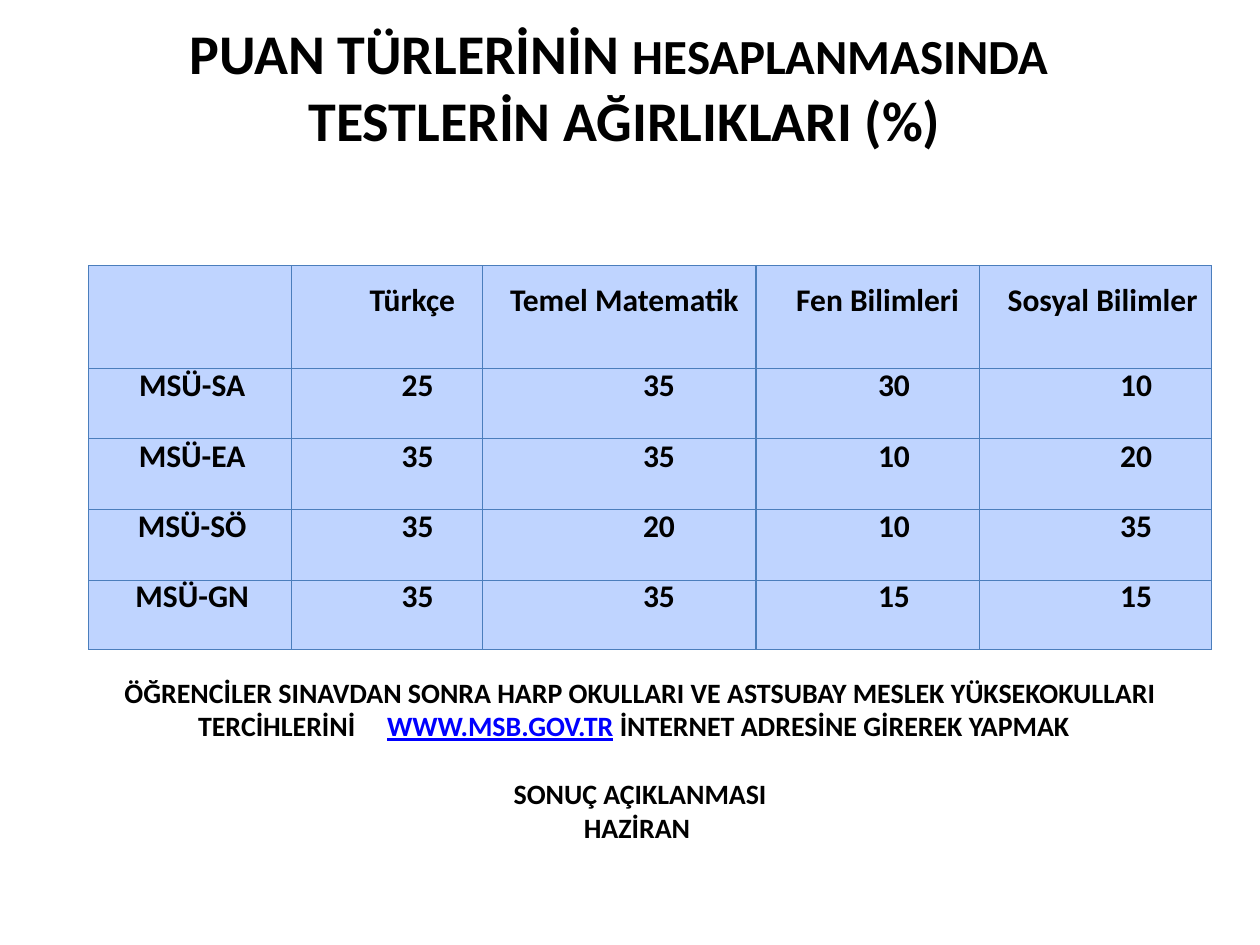
from lxml.etree import SubElement
from pptx import Presentation
from pptx.dml.color import RGBColor
from pptx.enum.text import MSO_ANCHOR, PP_ALIGN
from pptx.oxml.ns import qn
from pptx.util import Pt


def color(value):
    return RGBColor.from_string(value)


def style(span, size, ink="000000"):
    span.font.name = "Calibri"
    span.font.size = Pt(size)
    span.font.bold = True
    span.font.color.rgb = color(ink)


deck = Presentation()
deck.slide_width, deck.slide_height = Pt(720), Pt(540)
page = deck.slides.add_slide(deck.slide_layouts[6])

# Title, two centred lines
title = page.shapes.add_textbox(Pt(33.84), Pt(0), Pt(646.56), Pt(136)).text_frame
title.word_wrap = True
title.margin_top = Pt(10.4)
para = title.paragraphs[0]
para.alignment = PP_ALIGN.CENTER
for text, size in [("PUAN TÜRLERİNİN ", 32), ("HESAPLANMASINDA", 28), (" ", 32)]:
    span = para.add_run()
    span.text = text
    style(span, size)
para.add_line_break()
span = para.add_run()
span.text = "TESTLERİN AĞIRLIKLARI (%)"
style(span, 32)

# Weights table
rows = [
    ["", "Türkçe", "Temel Matematik", "Fen Bilimleri", "Sosyal Bilimler"],
    ["MSÜ-SA", "25", "35", "30", "10"],
    ["MSÜ-EA", "35", "35", "10", "20"],
    ["MSÜ-SÖ", "35", "20", "10", "35"],
    ["MSÜ-GN", "35", "35", "15", "15"],
]
widths = [116.2, 109, 156.2, 127.6, 132.5]
heights = [58.7, 40.3, 40.3, 40.5, 39.8]
header_indents = [0, 28.8, 5.8, 11.5, 8.6]
body_indents = [2.2, 34.6, 45.4, 30.2, 46.8]
line_heights = [10.3, 10.5, 10.5, 10.5, 10.3]

table = page.shapes.add_table(
    len(rows), len(widths), Pt(50.6), Pt(151.8), Pt(sum(widths)), Pt(sum(heights))
).table
table.first_row = table.horz_banding = False
for column, width in zip(table.columns, widths):
    column.width = Pt(width)
for r, values in enumerate(rows):
    table.rows[r].height = Pt(heights[r])
    indents = body_indents if r else header_indents
    for c, value in enumerate(values):
        cell = table.cell(r, c)
        cell.margin_left = cell.margin_right = cell.margin_bottom = 0
        cell.margin_top = Pt(line_heights[r] * (1 if r else 2))

        # Borders come before the fill in the cell properties
        properties = cell._tc.get_or_add_tcPr()
        for side in ("a:lnL", "a:lnR", "a:lnT", "a:lnB"):
            line = SubElement(properties, qn(side), w=str(Pt(0.75)))
            solid = SubElement(line, qn("a:solidFill"))
            SubElement(solid, qn("a:srgbClr"), val="4B7EBC")
        cell.fill.solid()
        cell.fill.fore_color.rgb = color("BFD4FF")

        if value:
            para = cell.text_frame.paragraphs[0]
            para.text = value
            para.alignment = PP_ALIGN.CENTER
            para.line_spacing = Pt(line_heights[r])
            para._p.get_or_add_pPr().set("marL", str(Pt(indents[c])))
            style(para.runs[0], 18)

# Note on preferences and results
note = page.shapes.add_textbox(Pt(28.1), Pt(382.3), Pt(675.4), Pt(123.8)).text_frame
note.word_wrap = True
note.vertical_anchor = MSO_ANCHOR.TOP
note.text = (
    "ÖĞRENCİLER SINAVDAN SONRA HARP OKULLARI VE ASTSUBAY MESLEK "
    "YÜKSEKOKULLARI TERCİHLERİNİ \t\nSONUÇ AÇIKLANMASI\nHAZİRAN "
)
address = note.paragraphs[0].add_run()
address.text = "WWW.MSB.GOV.TR"
note.paragraphs[0].add_run().text = " İNTERNET ADRESİNE GİREREK YAPMAK  "
for para in note.paragraphs:
    para.alignment = PP_ALIGN.CENTER
    for span in para.runs:
        style(span, 16)
address.font.color.rgb = color("0000FF")
address.font.underline = True
note.paragraphs[1].space_before = Pt(19.5)

deck.save("out.pptx")
